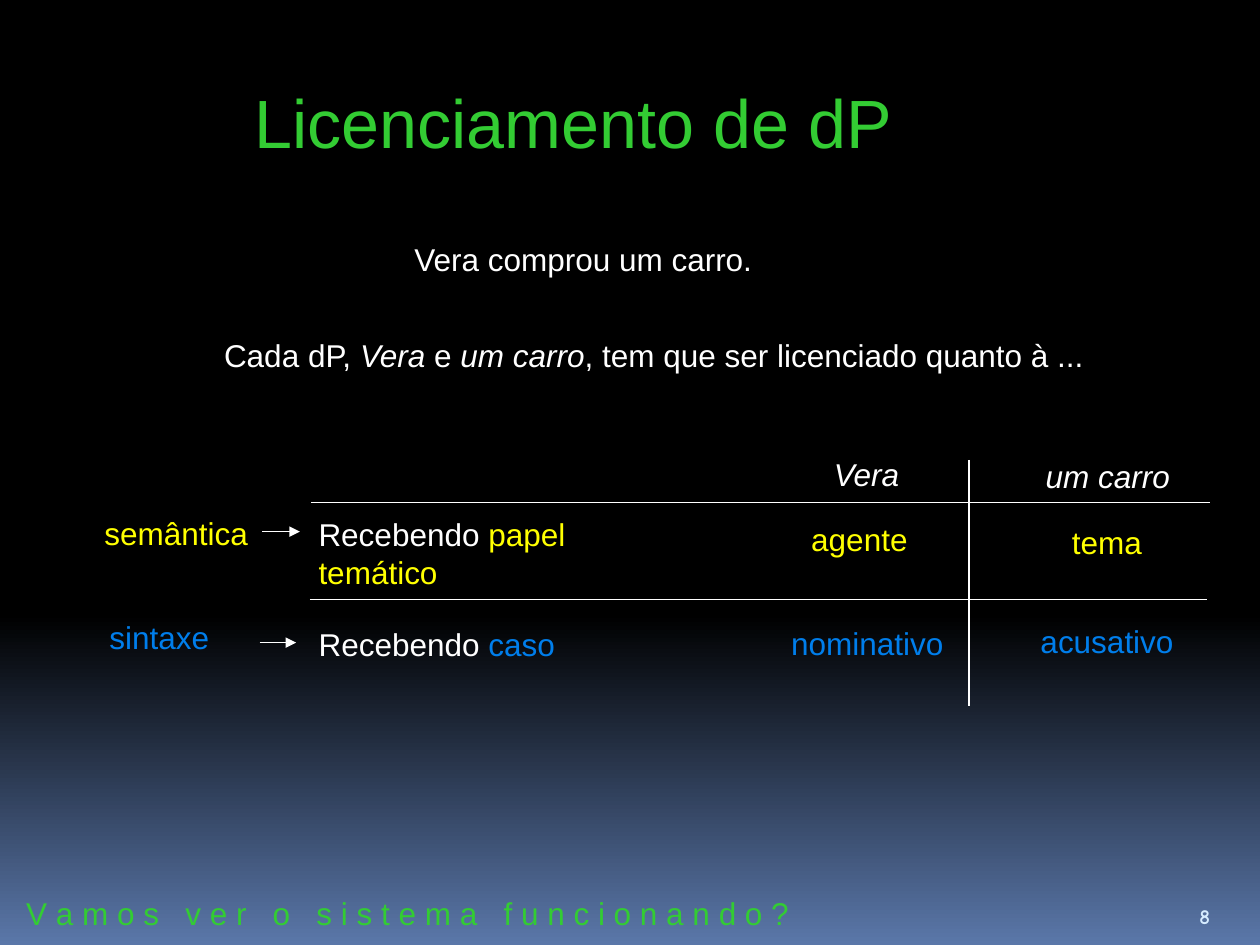
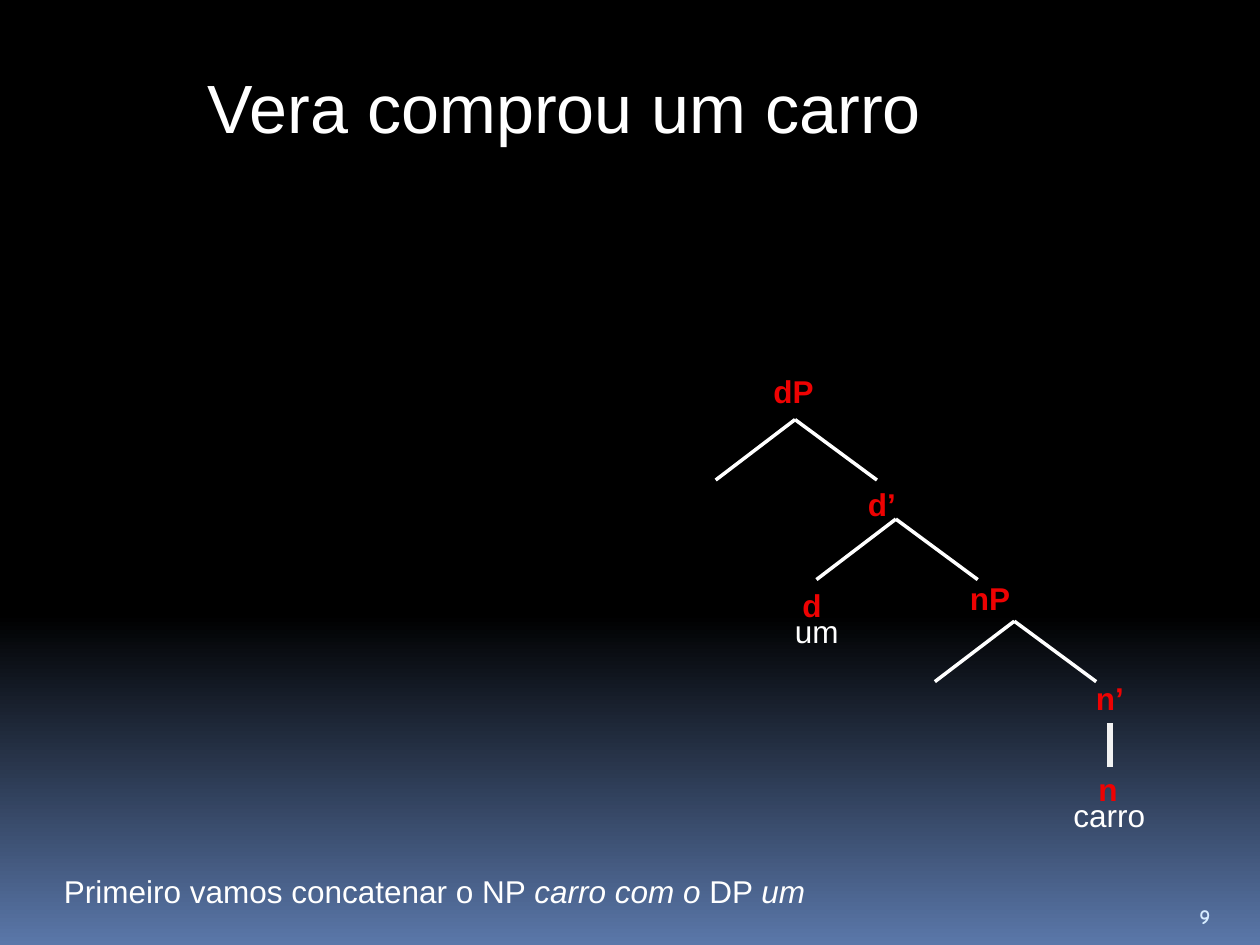
from copy import deepcopy
from pptx import Presentation as Deck
from pptx.dml.color import RGBColor as Rgb
from pptx.enum.shapes import MSO_CONNECTOR as Link
from pptx.enum.text import MSO_ANCHOR as Anchor, MSO_AUTO_SIZE as Auto, PP_ALIGN as Align
from pptx.oxml.ns import qn
from pptx.oxml.xmlchemy import OxmlElement as Node
from pptx.util import Inches, Pt

BLACK, WHITE, PALE, STEEL = "000000", "FFFFFF", "F2F2F2", "5A77A9"
GREEN, YELLOW, BLUE, RED, ICE = "33CC33", "FFFF00", "007EEB", "EE0202", "D6ECFF"


def paint(color, code):
    color.rgb = Rgb.from_string(code)


def write(par, text, size=18, font="Arial", color=WHITE, bold=False, slant=False):
    run = par.add_run()
    run.text = text
    run.font.size = Pt(size)
    run.font.name = font
    run.font.bold = bold
    run.font.italic = slant
    paint(run.font.color, color)


class Maker:
    def __init__(self):
        self.deck = Deck()
        self.deck.slide_width = Inches(10)
        self.deck.slide_height = Inches(7.5)
        self.slide = None
        self.shade()

    def shade(self):
        master = self.deck.slide_master
        fill = master.background.fill
        fill.gradient()
        fill.gradient_angle = 270
        first, last = fill.gradient_stops
        paint(first.color, BLACK)
        paint(last.color, STEEL)
        first.position, last.position = 0, 1
        stops = master.element.find(".//" + qn("a:gsLst"))
        middle = deepcopy(stops[0])
        middle.set("pos", "65000")
        stops.insert(1, middle)

    def start(self, number, title, left, top, color):
        self.slide = self.deck.slides.add_slide(self.deck.slide_layouts[5])
        head = self.slide.shapes.title
        head.left, head.top = Inches(left), Inches(top)
        head.width, head.height = Inches(6.38), Inches(0.88)
        frame = head.text_frame
        frame.word_wrap = True
        frame.auto_size = Auto.NONE
        frame.vertical_anchor = Anchor.MIDDLE
        par = frame.paragraphs[0]
        par.alignment = Align.LEFT
        write(par, title, size=39, color=color)
        self.text(9.42, 7.02, 0.5, str(number), wrap=True, anchor=Anchor.BOTTOM,
                  size=12, font="Comic Neue", color=ICE, bold=True)

    def text(self, left, top, width, *parts, wrap=False, anchor=Anchor.TOP, **style):
        box = self.slide.shapes.add_textbox(
            Inches(left), Inches(top), Inches(width), Inches(0.4))
        frame = box.text_frame
        frame.word_wrap = wrap
        frame.vertical_anchor = anchor
        for part in parts:
            words, extra = part if isinstance(part, tuple) else (part, {})
            write(frame.paragraphs[0], words, **{**style, **extra})

    def line(self, x1, y1, x2, y2, color=WHITE, width=0.75, arrow=False, host=None):
        link = (host or self.slide).shapes.add_connector(
            Link.STRAIGHT, Inches(x1), Inches(y1), Inches(x2), Inches(y2))
        paint(link.line.color, color)
        link.line.width = Pt(width)
        if arrow:
            tail = Node("a:tailEnd")
            tail.set("type", "triangle")
            link.line._get_or_add_ln().append(tail)
        link._element.spPr.append(Node("a:effectLst"))

    def fork(self, x, y):
        group = self.slide.shapes.add_group_shape()
        for side in (-0.63, 0.65):
            self.line(x + side, y + 0.48, x, y, width=2, host=group)

    def label(self, left, top, text, width=0.43):
        self.text(left, top, width, text, wrap=True, color=RED, bold=True)


def license(maker):
    slant = {"slant": True}
    maker.start(8, "Licenciamento de dP", 1.92, 0.52, GREEN)
    maker.text(0.11, 7.05, 6.33, " ".join("Vamos ver o sistema funcionando?"), color=GREEN)
    maker.text(3.19, 1.86, 2.9, "Vera comprou um carro.")
    maker.text(1.68, 2.62, 7.13, "Cada dP, ", ("Vera ", slant), "e ", ("um carro", slant),
               ", tem que ser licenciado quanto à ...")

    maker.text(6.52, 3.56, 0.73, "Vera", slant=True)
    maker.text(8.2, 3.58, 1.19, "um carro", slant=True)
    for left, top, width, word, color in (
            (0.73, 4.03, 1.34, "semântica", YELLOW),
            (6.34, 4.08, 0.97, "agente", YELLOW),
            (8.41, 4.1, 0.76, "tema", YELLOW),
            (0.77, 4.86, 0.99, "sintaxe", BLUE),
            (6.18, 4.9, 1.41, "nominativo", BLUE),
            (8.16, 4.89, 1.26, "acusativo", BLUE)):
        maker.text(left, top, width, word, color=color)
    for top, width, word, color in ((4.04, 3.17, "papel temático", YELLOW),
                                    (4.91, 2.08, "caso", BLUE)):
        maker.text(2.43, top, width, "Recebendo ", (word, {"color": color}))

    maker.line(7.69, 3.65, 7.69, 5.6)
    for left, right, y in ((2.47, 9.6, 3.99), (2.46, 9.58, 4.76)):
        maker.line(left, y, right, y)
    for left, right, y in ((2.08, 2.38, 4.22), (2.06, 2.35, 5.1)):
        maker.line(left, y, right, y, arrow=True)


def tree(maker):
    maker.start(9, "Vera comprou um carro", 1.55, 0.4, WHITE)
    for x, y in ((6.31, 3.33), (7.11, 4.12), (8.05, 4.93)):
        maker.fork(x, y)
    for left, top, node in ((6.79, 3.8, "d’"), (6.27, 4.6, "d"),
                            (8.6, 5.34, "n’"), (8.62, 6.06, "n")):
        maker.label(left, top, node)
    for left, top, phrase in ((6.04, 2.9, "dP"), (7.6, 4.55, "nP")):
        maker.label(left, top, phrase, width=1)
    maker.text(6.21, 4.81, 0.55, "um")
    maker.text(8.42, 6.27, 0.78, "carro")
    maker.line(8.81, 5.74, 8.81, 6.09, color=PALE, width=3)
    slant = {"slant": True}
    maker.text(0.41, 6.87, 6.7, "Primeiro vamos concatenar o NP ",
               ("carro com o ", slant), "DP ", ("um", slant), wrap=True)


def main():
    maker = Maker()
    license(maker)
    tree(maker)
    maker.deck.save("out.pptx")


if __name__ == "__main__":
    main()
